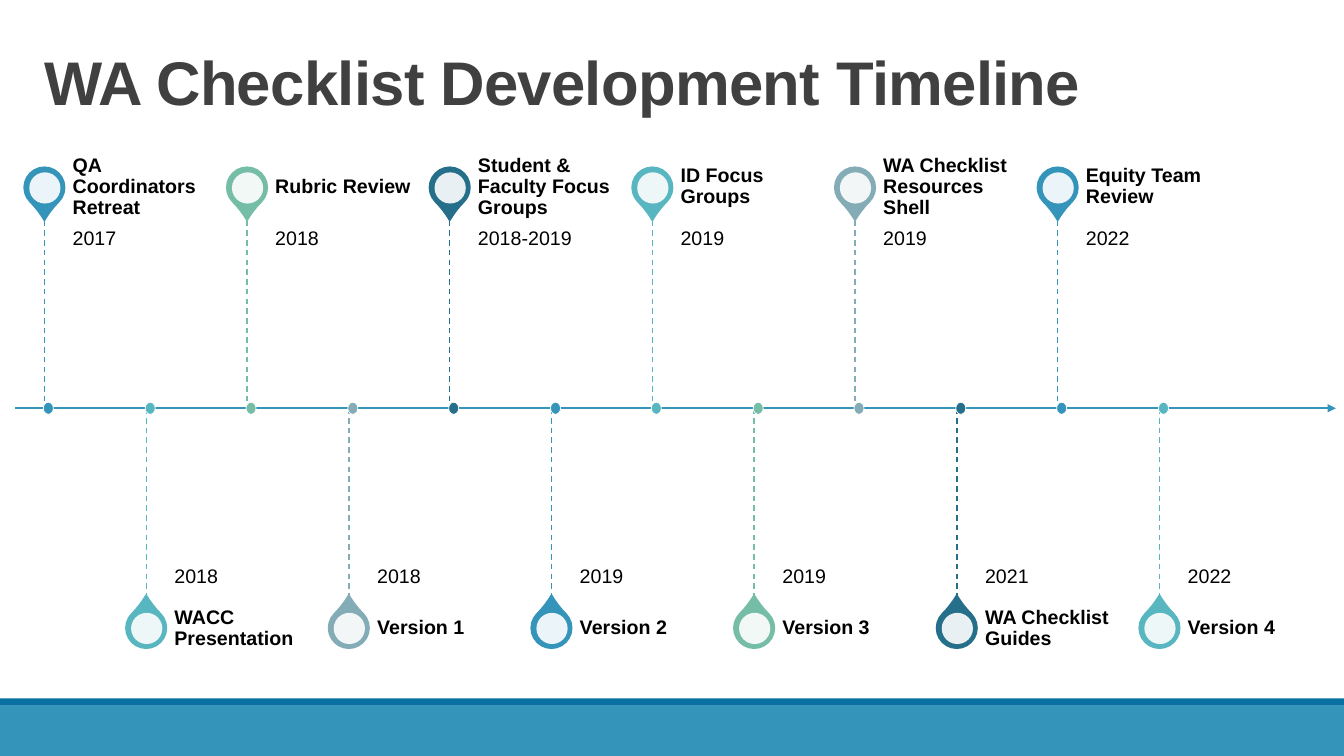
from lxml.etree import SubElement
from pptx import Presentation
from pptx.dml.color import RGBColor
from pptx.enum.dml import MSO_LINE
from pptx.enum.shapes import MSO_CONNECTOR, MSO_SHAPE
from pptx.enum.text import MSO_ANCHOR, PP_ALIGN
from pptx.oxml.ns import qn
from pptx.util import Emu, Pt

EMU_PER_PX = 9144
WIDTH, HEIGHT = 1333, 750
BLUE, TEAL, GREEN, GREY, NAVY = "3494BA", "58B6C0", "75BDA7", "84ACB6", "266F8B"
AXIS_Y = 405
FIRST_X, LAST_X = 44, 1150
PIN, DISC = 40, 31
MILESTONES = [
    ("QA Coordinators Retreat", "2017", BLUE),
    ("WACC Presentation", "2018", TEAL),
    ("Rubric Review", "2018", GREEN),
    ("Version 1", "2018", GREY),
    ("Student & Faculty Focus Groups", "2018-2019", NAVY),
    ("Version 2", "2019", BLUE),
    ("ID Focus Groups", "2019", TEAL),
    ("Version 3", "2019", GREEN),
    ("WA Checklist Resources Shell", "2019", GREY),
    ("WA Checklist Guides", "2021", NAVY),
    ("Equity Team Review", "2022", BLUE),
    ("Version 4", "2022", TEAL),
]


def px(length):
    return Emu(length * EMU_PER_PX)


def colour(value):
    return RGBColor.from_string(value)


class TimelineSlide:
    """Draws the timeline's elements on one slide in a shared style."""

    font = "Arial"

    def __init__(self, slide):
        self.shapes = slide.shapes

    def shape(self, kind, box, fill, outline=None, outline_width=1.0, opacity=100):
        shape = self.shapes.add_shape(kind, *map(px, box))
        shape.shadow.inherit = False
        shape.fill.solid()
        shape.fill.fore_color.rgb = colour(fill)
        if opacity < 100:
            fill_colour = shape.fill._xPr.find(qn("a:solidFill"))[0]
            SubElement(fill_colour, qn("a:alpha"), val=str(opacity * 1000))
        if outline:
            shape.line.color.rgb = colour(outline)
            shape.line.width = Pt(outline_width)
        else:
            shape.line.fill.background()
        return shape

    def line(self, start, end, stroke, width, dashed=False, arrow=False):
        line = self.shapes.add_connector(MSO_CONNECTOR.STRAIGHT, *map(px, start + end))
        line.line.color.rgb = colour(stroke)
        line.line.width = Pt(width)
        if dashed:
            line.line.dash_style = MSO_LINE.DASH
        if arrow:
            SubElement(line.line._get_or_add_ln(), qn("a:tailEnd"), type="triangle")
        SubElement(line._element.spPr, qn("a:effectLst"))

    def text(self, box, words, size, anchor, insets, ink="000000",
             bold=False, leading=0.9, tracking=0):
        frame = self.shapes.add_textbox(*map(px, box)).text_frame
        frame.word_wrap = True
        frame.vertical_anchor = anchor
        (frame.margin_left, frame.margin_top,
         frame.margin_right, frame.margin_bottom) = map(px, insets)
        paragraph = frame.paragraphs[0]
        paragraph.alignment = PP_ALIGN.LEFT
        paragraph.line_spacing = leading
        run = paragraph.add_run()
        run.text = words
        run.font.name = self.font
        run.font.size = Pt(size)
        run.font.bold = bold
        run.font.color.rgb = colour(ink)
        if tracking:
            run._r.get_or_add_rPr().set("spc", str(tracking))

    def milestone(self, x, above, label, year, accent):
        if above:
            pin_y, label_y, year_y, stem_y = 186, 153, 219, 219
            rotation, anchor, insets = 135, MSO_ANCHOR.TOP, (0, 10, 10, 15)
        else:
            pin_y, label_y, year_y, stem_y = 623, 591, 405, 591
            rotation, anchor, insets = 315, MSO_ANCHOR.BOTTOM, (0, 15, 0, 10)
        pin = self.shape(MSO_SHAPE.TEAR, (x - PIN // 2, pin_y - PIN // 2, PIN, PIN),
                         accent, accent, 1.25)
        pin.adjustments[0] = 1.15
        pin.rotation = rotation
        self.shape(MSO_SHAPE.OVAL, (x - DISC // 2, pin_y - DISC // 2, DISC, DISC),
                   "FFFFFF", opacity=90)
        self.text((x + 28, year_y, 145, 186), year, 14, anchor, insets)
        self.text((x + 28, label_y, 145, 65), label, 14, MSO_ANCHOR.MIDDLE,
                  (0, 0, 10, 0), bold=True)
        ends = sorted([stem_y, AXIS_Y])
        self.line((x, ends[0]), (x, ends[1]), accent, 1, dashed=True)
        self.shape(MSO_SHAPE.OVAL, (x - 1, AXIS_Y - 6, 10, 12), accent, "FFFFFF", 0.5)


def main():
    deck = Presentation()
    deck.slide_width, deck.slide_height = px(WIDTH), px(HEIGHT)
    timeline = TimelineSlide(deck.slides.add_slide(deck.slide_layouts[6]))
    timeline.shape(MSO_SHAPE.RECTANGLE, (0, 700, WIDTH, 50), BLUE)
    timeline.shape(MSO_SHAPE.RECTANGLE, (0, 693, WIDTH, 7), "0770A3")
    timeline.line((15, AXIS_Y), (1325, AXIS_Y), BLUE, 1.5, arrow=True)
    step = (LAST_X - FIRST_X) / (len(MILESTONES) - 1)
    for index, (label, year, accent) in enumerate(MILESTONES):
        timeline.milestone(round(FIRST_X + index * step), index % 2 == 0,
                           label, year, accent)
    timeline.text((34, 31, 1262, 111), "WA Checklist Development Timeline", 44,
                  MSO_ANCHOR.MIDDLE, (10, 5, 10, 5), "404040", bold=True,
                  leading=0.85, tracking=-50)
    deck.save("out.pptx")


if __name__ == "__main__":
    main()
